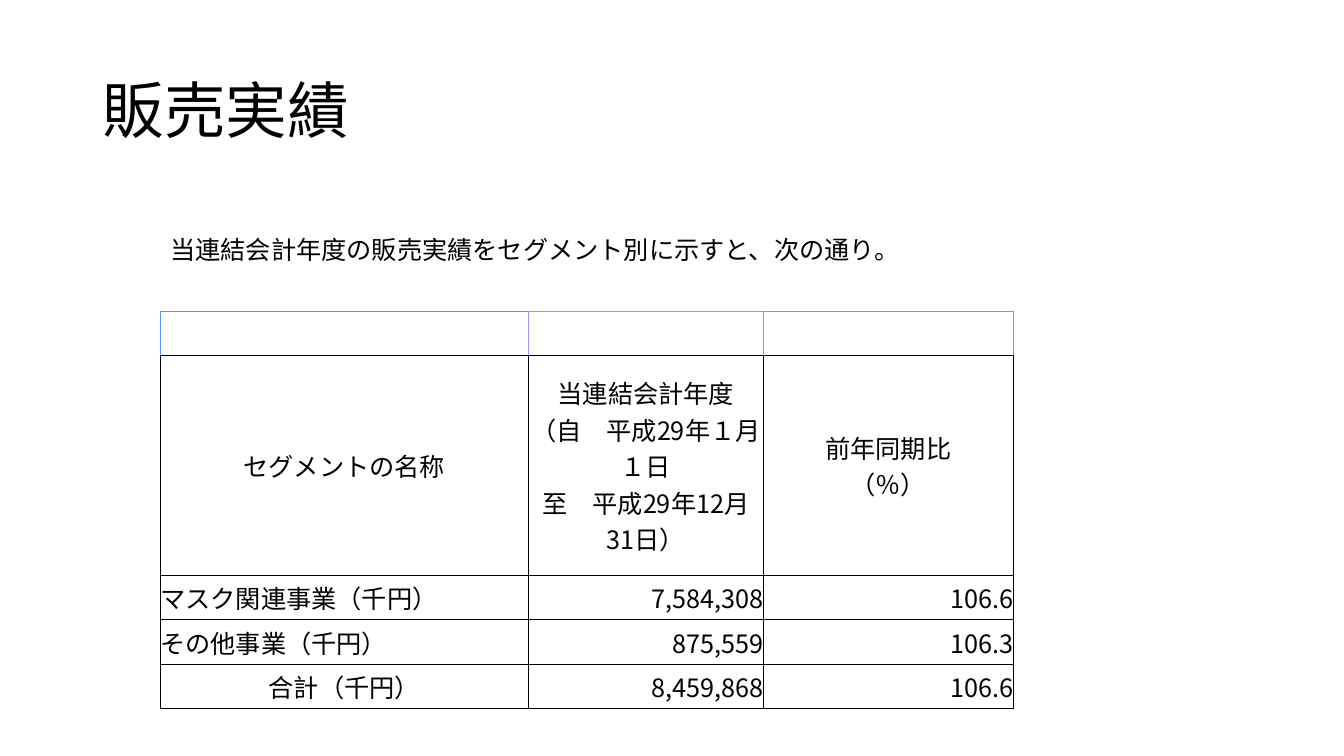
from lxml.etree import SubElement
from pptx import Presentation
from pptx.dml.color import RGBColor
from pptx.enum.text import MSO_ANCHOR, PP_ALIGN
from pptx.oxml import parse_xml
from pptx.oxml.ns import nsdecls, qn
from pptx.util import Inches, Pt

COLORS = {"ink": "000000", "blue": "5893FD", "violet": "9894FD", "slate": "7893FD"}
CJK_FONT = "Noto Sans CJK JP"

COLUMN_WIDTHS = (3.65, 2.33, 2.48)
ROW_HEIGHTS = (0.44, 2.18, 0.44, 0.44, 0.44)
SALES = (
    ("", "", ""),
    (
        "セグメントの名称",
        "当連結会計年度\n（自　平成29年１月１日\n至　平成29年12月31日）",
        "前年同期比\n（％）",
    ),
    ("マスク関連事業（千円）", "7,584,308", "106.6"),
    ("その他事業（千円）", "875,559", "106.3"),
    ("合計（千円）", "8,459,868", "106.6"),
)
# Left, right and top colours of the empty first row
TOP_ROW_BORDERS = (
    ("blue", "violet", "blue"),
    ("violet", "slate", "violet"),
    ("slate", "slate", "slate"),
)


def format_text(frame, size, latin_font=CJK_FONT, align=PP_ALIGN.LEFT):
    for paragraph in frame.paragraphs:
        paragraph.alignment = align
        for run in paragraph.runs:
            run.font.size = Pt(size)
            run.font.name = latin_font
            run.font.color.rgb = RGBColor.from_string(COLORS["ink"])
            SubElement(run.font._element, qn("a:ea"), typeface=CJK_FONT)


def add_text(slide, box, text, size, latin_font=CJK_FONT, wrap=True):
    frame = slide.shapes.add_textbox(*map(Inches, box)).text_frame
    frame.word_wrap = wrap
    frame.vertical_anchor = MSO_ANCHOR.MIDDLE
    frame.text = text
    format_text(frame, size, latin_font)
    return frame


def add_title(slide, box):
    title = add_text(slide, box, "販売実績", 44, "Calibri")
    title.paragraphs[0].line_spacing = 0.9


def set_borders(cell, left="ink", right="ink", top="ink", bottom="ink", top_width=0.75):
    sides = (("L", left, 0.75), ("R", right, 0.75), ("T", top, top_width), ("B", bottom, 0.75))
    properties = cell._tc.get_or_add_tcPr()
    for position, (side, color, width) in enumerate(sides):
        border = parse_xml(
            f'<a:ln{side} {nsdecls("a")} w="{Pt(width)}"><a:solidFill>'
            f'<a:srgbClr val="{COLORS[color]}"/></a:solidFill></a:ln{side}>'
        )
        properties.insert(position, border)


def cell_alignment(row, column):
    if row == 1 or (column == 0 and row == len(SALES) - 1):
        return PP_ALIGN.CENTER
    return PP_ALIGN.RIGHT if column else PP_ALIGN.LEFT


def add_sales_table(slide, left, top):
    box = (left, top, sum(COLUMN_WIDTHS), sum(ROW_HEIGHTS))
    table = slide.shapes.add_table(
        len(SALES), len(COLUMN_WIDTHS), *map(Inches, box)
    ).table
    table.first_row = table.horz_banding = False
    for column, width in zip(table.columns, COLUMN_WIDTHS):
        column.width = Inches(width)
    for row, height in zip(table.rows, ROW_HEIGHTS):
        row.height = Inches(height)

    for row, values in enumerate(SALES):
        for column, value in enumerate(values):
            cell = table.cell(row, column)
            cell.fill.background()
            cell.margin_left = cell.margin_right = 0
            cell.margin_top = cell.margin_bottom = 0
            cell.vertical_anchor = MSO_ANCHOR.MIDDLE
            if row == 0:
                set_borders(cell, *TOP_ROW_BORDERS[column], top_width=1)
                continue
            set_borders(cell)
            cell.text_frame.text = value
            format_text(cell.text_frame, 18, align=cell_alignment(row, column))


def main():
    deck = Presentation()
    deck.slide_width, deck.slide_height = Inches(13.33), Inches(7.5)
    slide = deck.slides.add_slide(deck.slide_layouts[6])
    add_title(slide, (0.92, 0.4, 11.5, 1.45))
    add_sales_table(slide, 1.59, 3.09)
    add_text(
        slide,
        (1.59, 2.27, 7.52, 0.4),
        "当連結会計年度の販売実績をセグメント別に示すと、次の通り。",
        18,
        wrap=False,
    )
    deck.save("out.pptx")


if __name__ == "__main__":
    main()
